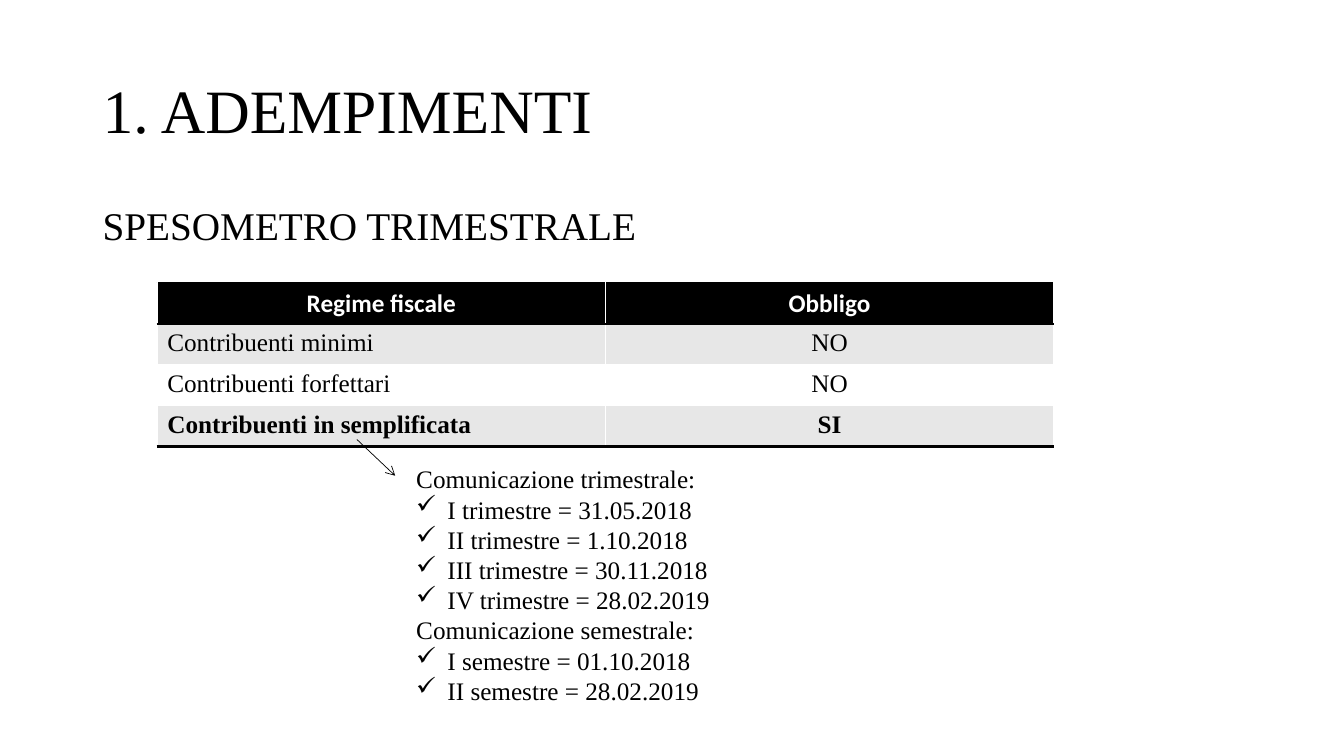
from lxml import etree
from pptx import Presentation
from pptx import util as u
from pptx.dml.color import RGBColor
from pptx.enum import shapes, text
from pptx.oxml import parse_xml
from pptx.oxml.ns import qn

WIDE, HIGH = 13.33, 7.5
HUES = {"ink": "000000", "paper": "FFFFFF", "band": "E7E7E7"}
SERIF, SANS = "Times New Roman", "Calibri"
NS = 'xmlns:a="http://schemas.openxmlformats.org/drawingml/2006/main"'
ROWS = [
    ("Regime fiscale", "Obbligo"),
    ("Contribuenti minimi", "NO"),
    ("Contribuenti forfettari", "NO"),
    ("Contribuenti in semplificata", "SI"),
]
DATES = [
    ("Comunicazione trimestrale:", [
        "I trimestre = 31.05.2018",
        "II trimestre = 1.10.2018",
        "III trimestre = 30.11.2018",
        "IV trimestre = 28.02.2019",
    ]),
    ("Comunicazione semestrale:", [
        "I semestre = 01.10.2018",
        "II semestre = 28.02.2019",
    ]),
]


def hue(name):
    return RGBColor.from_string(HUES[name])


def inches(*box):
    return [u.Inches(n) for n in box]


def write(par, words, size=18, font=SERIF, color="ink", bold=False,
          align="LEFT", line=None, before=0, mark=None):
    run = par.add_run()
    run.text = words
    run.font.size = u.Pt(size)
    run.font.name = font
    run.font.bold = bold
    run.font.color.rgb = hue(color)
    par.alignment = getattr(text.PP_ALIGN, align)
    par.space_before = u.Pt(before)
    if line:
        par.line_spacing = line
    if mark:
        props = par._p.get_or_add_pPr()
        dent = u.Inches(0.31)
        props.set("marL", str(dent))
        props.set("indent", str(-dent))
        etree.SubElement(props, qn("a:buChar")).set("char", mark)


def frame(slide, box, anchor="TOP"):
    body = slide.shapes.add_textbox(*inches(*box)).text_frame
    body.word_wrap = True
    body.vertical_anchor = getattr(text.MSO_ANCHOR, anchor)
    return body


def heading(slide, box, words, anchor="TOP", **form):
    write(frame(slide, box, anchor).paragraphs[0], words, line=0.9, **form)


def edge(cell, side):
    cell._tc.get_or_add_tcPr().insert(0, parse_xml(
        f'<a:ln{side} {NS} w="{u.Pt(2)}"><a:solidFill>'
        f'<a:srgbClr val="{HUES["ink"]}"/></a:solidFill></a:ln{side}>'))


def regimes(slide, box):
    grid = slide.shapes.add_table(len(ROWS), 2, *inches(*box)).table
    last = len(ROWS) - 1
    for r, row in enumerate(ROWS):
        for c, words in enumerate(row):
            cell = grid.cell(r, c)
            cell.fill.solid()
            fill = "ink" if r == 0 else "band" if r % 2 else "paper"
            cell.fill.fore_color.rgb = hue(fill)
            write(cell.text_frame.paragraphs[0], words,
                  font=SANS if r == 0 else SERIF,
                  color="paper" if r == 0 else "ink",
                  bold=r in (0, last),
                  align="CENTER" if r == 0 or c else "LEFT")
            if r in (0, last):
                edge(cell, "B")
            if r == 0:
                edge(cell, "T")


def arrow(slide, start, end):
    link = slide.shapes.add_connector(
        shapes.MSO_CONNECTOR.STRAIGHT, *inches(*start, *end))
    link.line.color.rgb = hue("ink")
    link.line.width = u.Pt(0.5)
    tip = etree.SubElement(link.line._get_or_add_ln(), qn("a:tailEnd"))
    tip.set("type", "arrow")
    etree.SubElement(link._element.spPr, qn("a:effectLst"))


def terms(slide, box):
    body = frame(slide, box)
    items = [(words, mark) for head, days in DATES
             for words, mark in [(head, None)] + [(day, "✓") for day in days]]
    for i, (words, mark) in enumerate(items):
        par = body.add_paragraph() if i else body.paragraphs[0]
        write(par, words, mark=mark)


def main():
    deck = Presentation()
    deck.slide_width, deck.slide_height = inches(WIDE, HIGH)
    slide = deck.slides.add_slide(deck.slide_layouts[6])
    left, span = 0.92, 11.5
    heading(slide, (left, 0.4, span, 1.45), "1. ADEMPIMENTI",
            anchor="MIDDLE", size=44)
    heading(slide, (left, 2, span, 4.76), "SPESOMETRO TRIMESTRALE",
            size=28, before=10)
    regimes(slide, (1.56, 2.81, 8.89, 1.62))
    arrow(slide, (3.54, 4.36), (3.92, 4.72))
    terms(slide, (4.03, 4.55, 5.12, 2.83))
    deck.save("out.pptx")


if __name__ == "__main__":
    main()
